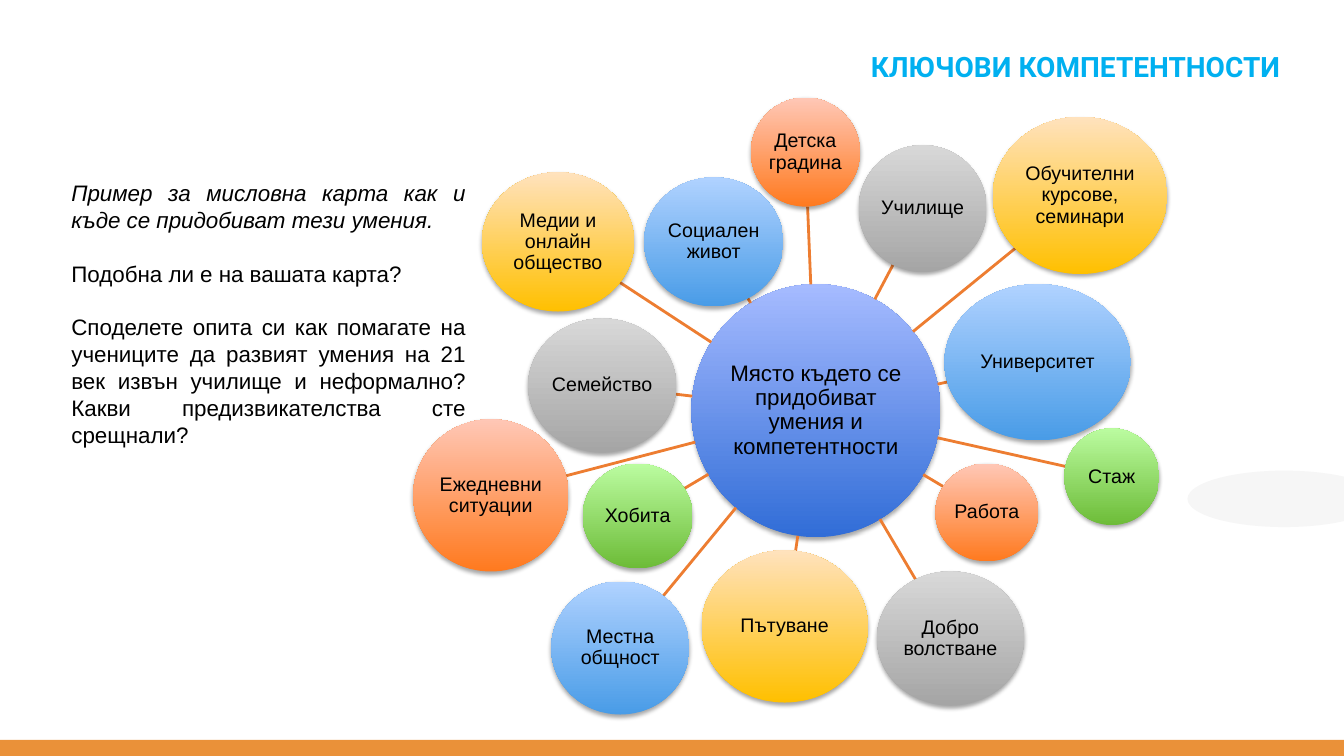
from itertools import cycle
from math import hypot

from lxml import etree
from pptx import Presentation
from pptx.dml.color import RGBColor
from pptx.enum.shapes import MSO_CONNECTOR, MSO_SHAPE
from pptx.enum.text import MSO_ANCHOR, PP_ALIGN
from pptx.oxml.ns import qn
from pptx.util import Pt

OVAL, RECTANGLE = MSO_SHAPE.OVAL, MSO_SHAPE.RECTANGLE
STRAIGHT = MSO_CONNECTOR.STRAIGHT
TOP, MIDDLE = MSO_ANCHOR.TOP, MSO_ANCHOR.MIDDLE
CENTER, RIGHT, JUSTIFY = PP_ALIGN.CENTER, PP_ALIGN.RIGHT, PP_ALIGN.JUSTIFY

COLORS = {
    "text": "000000",
    "title": "00B0F0",
    "spoke": "ED7D31",
    "footer": "EA9139",
    "oval": "F5F5F5",
}
# Bottom and top colour of each gradient
GRADIENTS = {
    "hub": ("316DD7", "A6BBFF"),
    "orange": ("FF7A1F", "FFC7B6"),
    "gray": ("A5A5A5", "D8D8D8"),
    "yellow": ("FFC000", "FFE2BD"),
    "blue": ("499CE7", "B0D2FF"),
    "green": ("6DBC38", "BBFCA0"),
}
BUBBLE_CYCLE = ("orange", "gray", "yellow", "blue", "green")

TITLE = "КЛЮЧОВИ КОМПЕТЕНТНОСТИ"
QUESTIONS = (
    "Пример за мисловна карта как и къде се придобиват тези умения.",
    "Подобна ли е на вашата карта?",
    "Споделете опита си как помагате на учениците да развият умения на 21 век "
    "извън училище и неформално? Какви предизвикателства сте срещнали?",
)
HUB_TEXT = "Място където се придобиват умения и компетентности"
HUB_BOX = (493.9, 203, 177.8, 180.7)
# Clockwise from the top: label and (left, top, width, height)
BUBBLES = (
    ("Детска градина", (536.4, 69.8, 77.8, 77.8)),
    ("Училище", (613.4, 103.7, 91.4, 90.7)),
    ("Обучителни курсове, семинари", (709.2, 83.5, 124.6, 112.3)),
    ("Университет", (674.6, 203, 133.2, 111.6)),
    ("Стаж", (760.3, 306, 67.7, 69.1)),
    ("Работа", (668.2, 331.2, 73.4, 69.8)),
    ("Добро\vволстване", (626.4, 408.2, 105.1, 95.8)),
    ("Пътуване", (501.1, 393.1, 118.8, 108.7)),
    ("Местна общност", (393.8, 415.4, 98.6, 95)),
    ("Хобита", (416.2, 331.2, 78.5, 74.9)),
    ("Ежедневни ситуации", (295.2, 299.5, 110.9, 108.7)),
    ("Семейство", (377.3, 227.5, 105.8, 95.8)),
    ("Медии и онлайн общество", (344.2, 123.1, 108.7, 99.4)),
    ("Социален живот", (460.1, 126.7, 99.4, 92.2)),
)


def points(values):
    return [Pt(value) for value in values]


def rgb(name):
    return RGBColor.from_string(COLORS[name])


def add_plain_shape(page, kind, box, color):
    shape = page.shapes.add_shape(kind, *points(box))
    shape.shadow.inherit = False
    shape.fill.solid()
    shape.fill.fore_color.rgb = rgb(color)
    shape.line.fill.background()
    return shape


def set_opacity(shape, percent):
    color = shape._element.spPr.find(qn("a:solidFill"))[0]
    etree.SubElement(color, qn("a:alpha"), val=str(percent * 1000))


def set_soft_shadow(shape):
    shape.shadow.inherit = False
    effects = shape._element.spPr.find(qn("a:effectLst"))
    shadow = etree.SubElement(
        effects, qn("a:outerShdw"), blurRad=str(Pt(3.1)), dist=str(Pt(1.8)),
        dir="5400000", rotWithShape="0")
    color = etree.SubElement(shadow, qn("a:srgbClr"), val="000000")
    etree.SubElement(color, qn("a:alpha"), val="35000")


def style_paragraph(para, size, align, font="Arial", color="text", spacing=None):
    para.alignment = align
    para.line_spacing = spacing
    for span in para.runs:
        span.font.size = Pt(size)
        span.font.name = font
        span.font.color.rgb = rgb(color)


def add_text_box(page, box):
    frame = page.shapes.add_textbox(*points(box)).text_frame
    frame.word_wrap = True
    frame.vertical_anchor = TOP
    return frame


def add_title(page):
    para = add_text_box(page, (237.6, 34.6, 684, 66.2)).paragraphs[0]
    para.text = TITLE
    style_paragraph(para, 20, RIGHT, "Roboto", "title", 0.9)
    para.runs[0].font.bold = True


def add_questions(page):
    frame = add_text_box(page, (43.9, 124.6, 295.9, 200.9))
    frame.text = "\n".join(QUESTIONS)
    for para in frame.paragraphs:
        style_paragraph(para, 16, JUSTIFY)
    for para in frame.paragraphs[1:]:
        para.space_before = Pt(19)
    frame.paragraphs[0].runs[0].font.italic = True


def add_bubble(page, text, box, gradient, size):
    bubble = page.shapes.add_shape(OVAL, *points(box))
    set_soft_shadow(bubble)
    bubble.line.fill.background()
    bubble.fill.gradient()
    bubble.fill.gradient_angle = 90
    for stop, color in zip(bubble.fill.gradient_stops, GRADIENTS[gradient]):
        stop.color.rgb = RGBColor.from_string(color)
    frame = bubble.text_frame
    frame.word_wrap = True
    frame.vertical_anchor = MIDDLE
    frame.margin_left = frame.margin_right = Pt(0.7)
    frame.margin_top = frame.margin_bottom = Pt(0.7)
    frame.text = text
    style_paragraph(frame.paragraphs[0], size, CENTER, spacing=0.9)


def center(box):
    left, top, width, height = box
    return left + width / 2, top + height / 2


def rim_point(box, target):
    """Point where the ellipse in box meets the ray from its centre to target."""
    x, y = center(box)
    dx, dy = target[0] - x, target[1] - y
    reach = 1 / hypot(dx / (box[2] / 2), dy / (box[3] / 2))
    return x + dx * reach, y + dy * reach


def add_spoke(page, box):
    start = rim_point(HUB_BOX, center(box))
    end = rim_point(box, center(HUB_BOX))
    spoke = page.shapes.add_connector(STRAIGHT, *points(start + end))
    spoke.line.color.rgb = rgb("spoke")
    spoke.line.width = Pt(2)
    etree.SubElement(spoke._element.spPr, qn("a:effectLst"))


def main():
    deck = Presentation()
    deck.slide_width, deck.slide_height = Pt(960), Pt(540)
    page = deck.slides.add_slide(deck.slide_layouts[6])
    oval = add_plain_shape(page, OVAL, (848.2, 336.2, 138.2, 40.3), "oval")
    set_opacity(oval, 89)
    add_plain_shape(page, RECTANGLE, (0, 528.5, 960, 11.5), "footer")
    add_questions(page)
    add_title(page)
    add_bubble(page, HUB_TEXT, HUB_BOX, "hub", 16)
    for (label, box), gradient in zip(BUBBLES, cycle(BUBBLE_CYCLE)):
        add_spoke(page, box)
        add_bubble(page, label, box, gradient, 14)
    deck.save("out.pptx")


if __name__ == "__main__":
    main()
